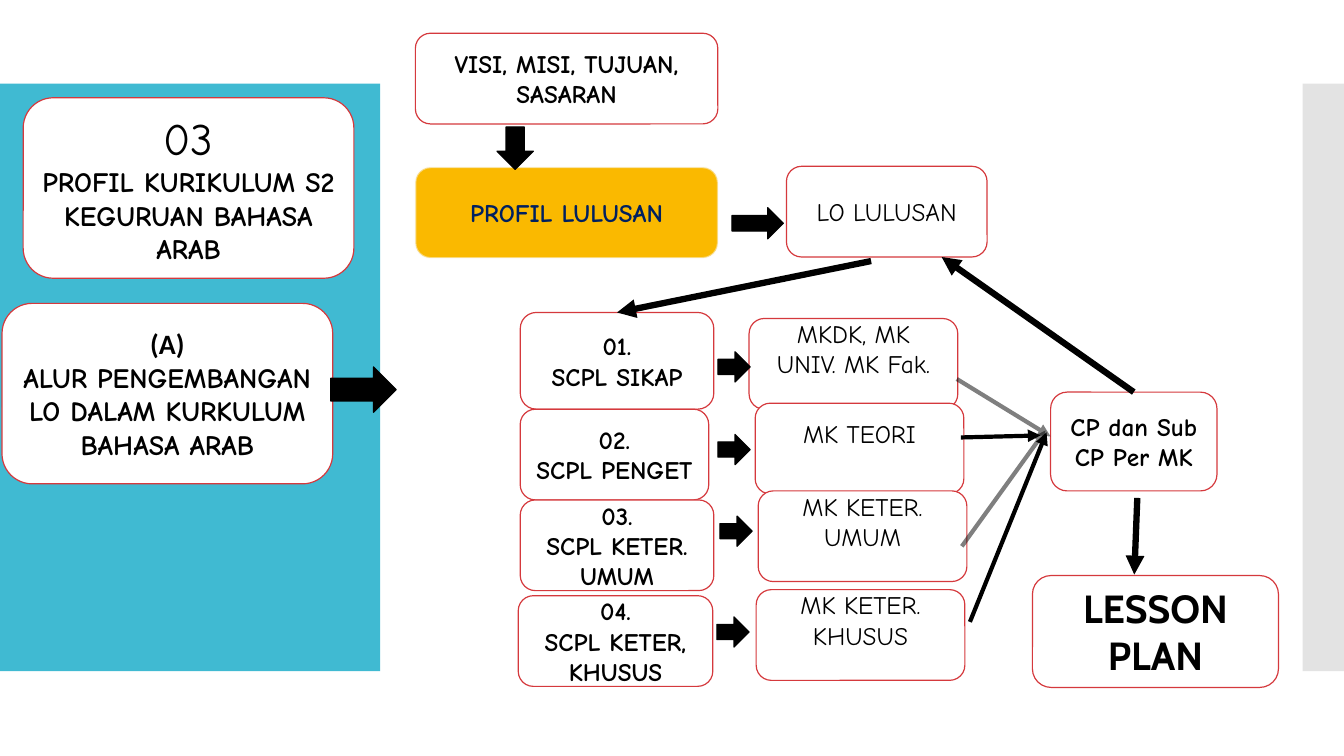
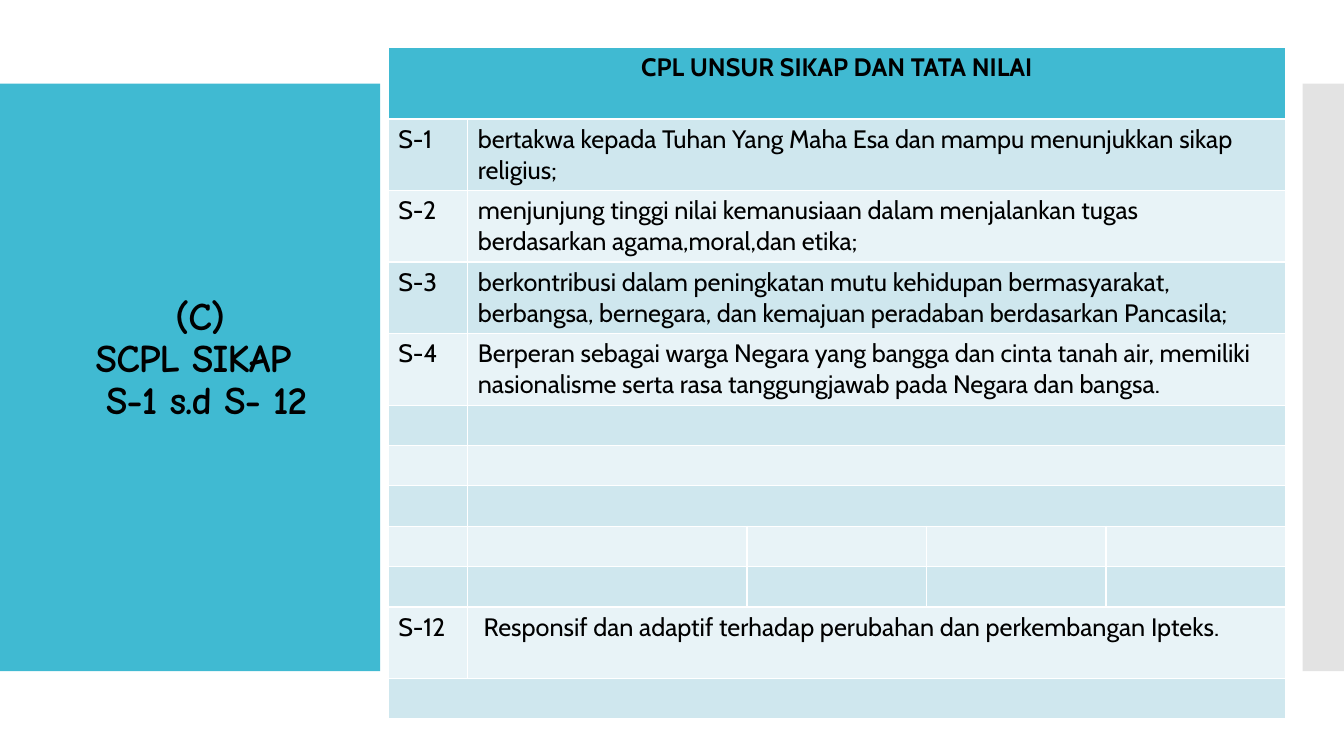
from lxml import etree
from pptx import Presentation
from pptx import util as u
from pptx.dml.color import RGBColor
from pptx.enum import shapes, text
from pptx.oxml.ns import qn

COLORS = {"teal": "40BAD2", "grey": "C8C8C8", "white": "FFFFFF", "black": "000000",
          "red": "D5393D", "gold": "FAB900", "pale": "F9F9F9", "navy": "002060",
          "dark_row": "CFE7EE", "light_row": "E8F3F7"}
RGB = {name: RGBColor.from_string(value) for name, value in COLORS.items()}
KIND = shapes.MSO_SHAPE
HAND, SANS = "Comic Neue", "Cabin"


def add_text(p, content, size=18, font=HAND, color="black", bold=False, align="CENTER"):
    """Fill a paragraph, one run per line."""
    p.alignment = getattr(text.PP_ALIGN, align)
    for i, line in enumerate(content.split("\n")):
        if i:
            p.add_line_break()
        r = p.add_run()
        r.text = line
        r.font.size, r.font.name, r.font.bold = u.Pt(size), font, bold
        r.font.color.rgb = RGB[color]


def add_box(s, kind, at, fill="white", line="red", paragraphs=(), width=0.85):
    """Add a preset shape with (text, style) paragraphs."""
    sp = s.shapes.add_shape(kind, *[u.Inches(v) for v in at])
    sp.shadow.inherit = False
    sp.fill.solid()
    sp.fill.fore_color.rgb = RGB[fill]
    if line:
        sp.line.color.rgb = RGB[line]
        sp.line.width = u.Pt(width)
    else:
        sp.line.fill.background()
    tf = sp.text_frame
    tf.word_wrap = True
    tf.vertical_anchor = text.MSO_ANCHOR.MIDDLE
    for i, (content, style) in enumerate(paragraphs):
        add_text(tf.add_paragraph() if i else tf.paragraphs[0], content, **style)
    return sp


prs = Presentation()
prs.slide_width, prs.slide_height = u.Inches(13.33), u.Inches(7.5)
blank = prs.slide_layouts[6]
half_clear = []  # colour elements drawn at 50 %

# Side bands, moved to the layout that both slides use
s = prs.slides.add_slide(blank)
for left, width, color in [(0, 3.77, "teal"), (12.92, 0.42, "grey")]:
    band = add_box(s, KIND.RECTANGLE, (left, 0.83, width, 5.83), color, None)
    blank.shapes.element.append(band.element)
half_clear += band.element.xpath("./p:spPr/a:solidFill/a:srgbClr")

# Slide 1: vision and graduate profile
ROUND = KIND.ROUNDED_RECTANGLE
bold = {"bold": True}
add_box(s, ROUND, (4.12, 0.33, 3, 0.9), paragraphs=[("VISI, MISI, TUJUAN, SASARAN", bold)])
profile = add_box(s, ROUND, (4.12, 1.66, 3, 0.9), "gold", "pale",
                  [("PROFIL LULUSAN", {"bold": True, "color": "navy"})], 1.35)
half_clear += profile.element.xpath("./p:spPr/a:ln//a:srgbClr")

# Learning outcomes
outcomes = []
for number, name, at in [("01.", "SCPL SIKAP", (5.16, 3.1, 1.92, 0.96)),
                         ("02.", "SCPL PENGET", (5.16, 4.06, 1.87, 0.9)),
                         ("03.", "SCPL KETER. UMUM", (5.16, 4.96, 1.92, 0.9)),
                         ("04.", "SCPL KETER, KHUSUS", (5.14, 5.91, 1.93, 0.9))]:
    outcomes.append(add_box(s, ROUND, at, paragraphs=[(number, bold), (name, bold)]))
add_box(s, ROUND, (7.8, 1.65, 1.99, 0.9), paragraphs=[("LO LULUSAN", {})])

# Courses, with their text raised by a deep bottom inset
for name, left, top in [("MKDK, MK UNIV. MK Fak.", 7.43, 3.16), ("MK TEORI", 7.49, 4),
                        ("MK KETER. UMUM", 7.52, 4.87), ("MK KETER. KHUSUS", 7.5, 5.85)]:
    course = add_box(s, ROUND, (left, top, 2.07, 0.9), paragraphs=[(name, {})])
    course.text_frame.margin_bottom = u.Inches(0.35)

# Block arrows
add_box(s, KIND.DOWN_ARROW, (4.93, 1.26, 0.36, 0.42), "black", "black")
for at in [(7.12, 3.49, 0.32, 0.3), (7.12, 4.31, 0.32, 0.3), (7.14, 5.12, 0.32, 0.3),
           (7.11, 6.12, 0.32, 0.3), (7.26, 2.06, 0.51, 0.31)]:
    add_box(s, KIND.RIGHT_ARROW, at, "black", "black")

# Course outcomes, lesson plan and left-hand headings
per_course = add_box(s, ROUND, (10.42, 3.89, 1.65, 0.98),
                     paragraphs=[("CP dan Sub CP Per MK", bold)])
add_box(s, ROUND, (10.24, 5.71, 2.44, 1.11),
        paragraphs=[("LESSON PLAN", {"size": 28, "font": SANS, "bold": True})])
heading = {"size": 20, "bold": True}
add_box(s, ROUND, (0.02, 3.01, 3.28, 1.79), paragraphs=[
    ("(A)", {**heading, "font": "Calibri"}),
    ("ALUR PENGEMBANGAN LO DALAM KURKULUM BAHASA ARAB", heading)])
add_box(s, ROUND, (0.23, 0.97, 3.28, 1.79), paragraphs=[
    ("03", {"size": 32}), ("PROFIL KURIKULUM S2 KEGURUAN BAHASA ARAB", heading)])
add_box(s, KIND.RIGHT_ARROW, (3.28, 3.64, 0.65, 0.45), "black", "black")

# Line arrows: ends, width, half clear, joined begin, joined end
for ends, width, faded, begin, end in [
        ((9.49, 3.76, 10.42, 4.33), 3, True, None, None),
        ((9.53, 4.34, 10.32, 4.32), 3, False, None, None),
        ((9.54, 5.42, 10.37, 4.27), 3, True, None, None),
        ((9.62, 6.17, 10.38, 4.29), 3, False, None, None),
        ((11.28, 4.94, 11.25, 5.7), 4.5, False, None, None),
        ((8.64, 2.59, 6.11, 3.1), 4.5, False, None, outcomes[0]),
        ((11.25, 3.87, 9.34, 2.55), 4.5, False, per_course, None)]:
    c = s.shapes.add_connector(shapes.MSO_CONNECTOR.STRAIGHT, *[u.Inches(v) for v in ends])
    c.line.color.rgb = RGB["black"]
    c.line.width = u.Pt(width)
    if begin:
        c.begin_connect(begin, 0)
    if end:
        c.end_connect(end, 0)
    ln = c.element.xpath("./p:spPr/a:ln")[0]
    etree.SubElement(ln, qn("a:tailEnd"), type="triangle")
    etree.SubElement(ln.getparent(), qn("a:effectLst"))
    if faded:
        half_clear += ln.xpath(".//a:srgbClr")

for color in half_clear:
    etree.SubElement(color, qn("a:alpha"), val="50000")

# Slide 2: title
s = prs.slides.add_slide(blank)
title = s.shapes.add_textbox(u.Inches(0.3), u.Inches(1.19), u.Inches(3.37), u.Inches(4.76))
tf = title.text_frame
tf.word_wrap = True
tf.vertical_anchor = text.MSO_ANCHOR.MIDDLE
p = tf.paragraphs[0]
p.line_spacing = 0.9
add_text(p, "(C)\nSCPL SIKAP \n S-1 s.d S- 12", size=28, bold=True)
for props in title.element.xpath(".//a:r/a:rPr"):
    props.set("spc", "-60")

# Attitude table
TALL, SHORT = 0.71, 0.4
COLS = [0.79, 2.77, 1.78, 1.78, 1.78]
rows = [
    ("CPL UNSUR SIKAP DAN TATA NILAI", ""),
    ("S-1", "bertakwa kepada Tuhan Yang Maha Esa dan mampu menunjukkan sikap \nreligius;"),
    ("S-2", "menjunjung tinggi nilai kemanusiaan dalam menjalankan tugas \n"
            "berdasarkan agama,moral,dan etika;"),
    ("S-3", "berkontribusi dalam peningkatan mutu kehidupan bermasyarakat, \n"
            "berbangsa, bernegara, dan kemajuan peradaban berdasarkan Pancasila;"),
    ("S-4", "Berperan sebagai warga Negara yang bangga dan cinta tanah air, memiliki "
            "nasionalisme serta rasa tanggungjawab pada Negara dan bangsa."),
    *[("", "")] * 5,
    ("S-12", " Responsif dan adaptif terhadap perubahan dan perkembangan Ipteks."),
    ("", "")]
heights = [TALL if row[0] else SHORT for row in rows]
last = len(rows) - 1
unmerged = (8, 9)
table = s.shapes.add_table(len(rows), len(COLS), u.Inches(3.85), u.Inches(0.47),
                           u.Inches(sum(COLS)), u.Inches(sum(heights))).table
for col, width in zip(table.columns, COLS):
    col.width = u.Inches(width)
for i, row in enumerate(rows):
    table.rows[i].height = u.Inches(heights[i])
    for j in range(len(COLS)):
        cell = table.cell(i, j)
        cell.fill.solid()
        cell.fill.fore_color.rgb = RGB["teal" if i == 0 else "dark_row" if i % 2 else "light_row"]
        if j < 2 and row[j]:
            add_text(cell.text_frame.paragraphs[0], row[j], font=SANS, bold=i == 0,
                     align="LEFT" if i else "CENTER")
    if i not in unmerged:
        table.cell(i, 0 if i in (0, last) else 1).merge(table.cell(i, len(COLS) - 1))

prs.save("out.pptx")
